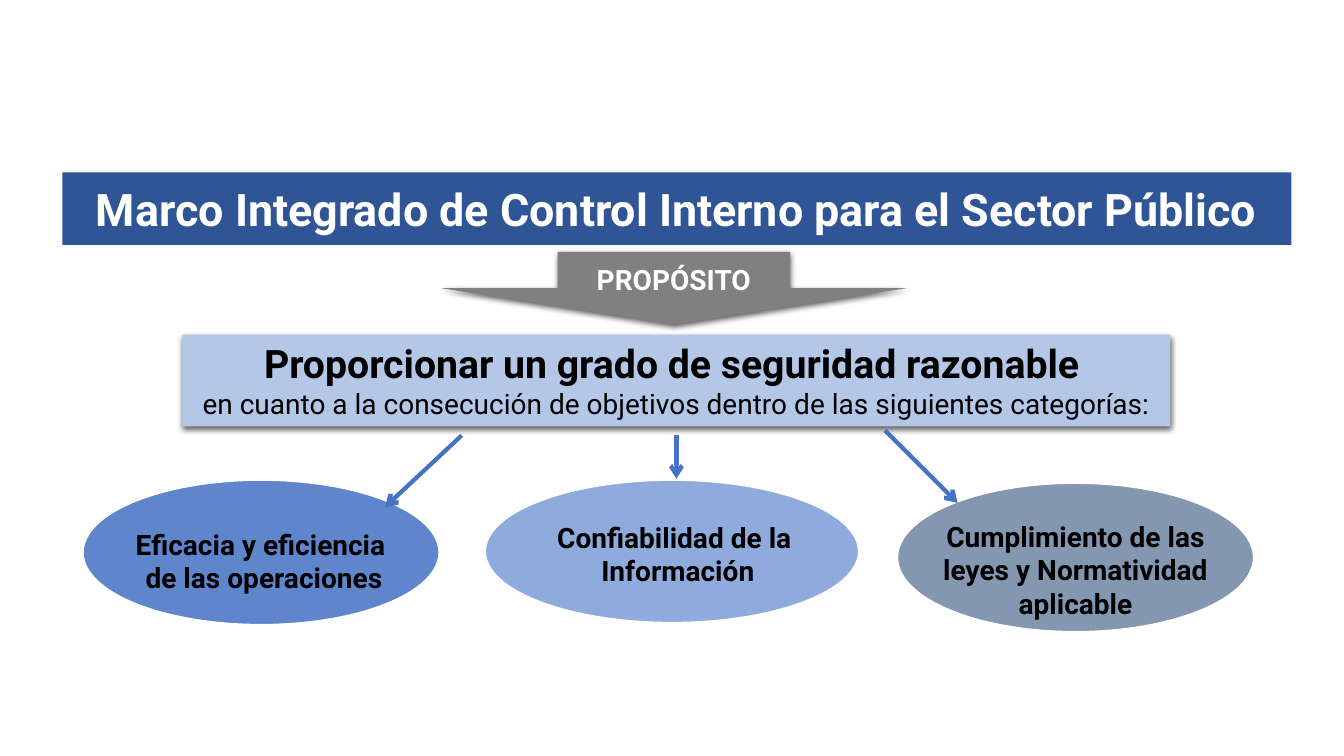
"""Builds the slide on the purpose of the internal control framework."""
from lxml import etree
from pptx import Presentation
from pptx.dml.color import RGBColor
from pptx.enum.shapes import MSO_CONNECTOR, MSO_SHAPE as SHAPE
from pptx.enum.text import MSO_ANCHOR as ANCHOR, MSO_AUTO_SIZE, PP_ALIGN
from pptx.oxml.ns import qn
from pptx.util import Inches, Pt

FONT = "Roboto"
COLORS = {
    "title": "2F5597", "purpose": "808080", "goal": "B4C7E7", "arrow": "4472C4",
    "efficacy": "5F86CD", "reliability": "8FAADC", "compliance": "8497B0",
    "white": "FFFFFF", "black": "000000",
}

TITLE = ("Marco Integrado de Control Interno para el Sector Público", (4.65, 22.8, 91.43, 9.6))
PURPOSE = ("PROPÓSITO", (32.85, 33.33, 34.58, 9.6))
GOAL = [
    ("Proporcionar un grado de seguridad razonable ", 28, True),
    ("en cuanto a la consecución de objetivos dentro de las siguientes categorías:", 20, False),
]
GOAL_BOX = (13.58, 44.27, 73.5, 12.13)
CATEGORIES = [
    {"color": "efficacy", "lines": ["Eficacia y eficiencia ", "de las operaciones"],
     "oval": (6.15, 63.47, 26.55, 19.2), "label": (8.25, 69.07, 22.8, 10.27),
     "arrow": (34.35, 57.6, 28.65, 67.07)},
    {"color": "reliability", "lines": ["Confiabilidad de la", " Información"],
     "oval": (36.08, 63.47, 27.83, 18.93), "label": (36.83, 68.13, 26.7, 10.27),
     "arrow": (50.33, 57.6, 50.33, 63.33)},
    {"color": "compliance", "lines": ["Cumplimiento de las leyes y Normatividad aplicable"],
     "oval": (66.75, 63.87, 26.55, 19.73), "label": (68.85, 68, 22.35, 14.8),
     "arrow": (65.85, 56.93, 71.25, 66.53)},
]

prs = Presentation()
prs.slide_width, prs.slide_height = Inches(13.33), Inches(7.5)
slide = prs.slides.add_slide(prs.slide_layouts[5])


def place(shares):
    """Turns percentages of the slide's width and height into lengths."""
    sizes = (prs.slide_width, prs.slide_height) * 2
    return [round(size * share / 100) for size, share in zip(sizes, shares)]


def rgb(name):
    return RGBColor.from_string(COLORS[name])


def paint(sp, color):
    sp.fill.solid()
    sp.fill.fore_color.rgb = rgb(color)


def write(sp, lines, color="black", anchor=ANCHOR.TOP):
    tf = sp.text_frame
    tf.word_wrap, tf.auto_size, tf.vertical_anchor = True, MSO_AUTO_SIZE.NONE, anchor
    for i, (text, size, bold) in enumerate(lines):
        p = tf.paragraphs[0] if i == 0 else tf.add_paragraph()
        p.alignment = PP_ALIGN.CENTER
        r = p.add_run()
        r.text = text
        r.font.name, r.font.size, r.font.bold = FONT, Pt(size), bold
        r.font.color.rgb = rgb(color)


def add_shape(kind, box, color, outline=None, shadow=False):
    sp = slide.shapes.add_shape(kind, *place(box))
    paint(sp, color)
    if outline:
        sp.line.color.rgb, sp.line.width = rgb(outline), Pt(1.5)
    else:
        sp.line.fill.background()
    sp.shadow.inherit = False
    if shadow:
        effects = sp._element.spPr.find(qn("a:effectLst"))
        outer = etree.SubElement(effects, qn("a:outerShdw"), blurRad=str(Pt(4.5)),
                                 dist=str(Pt(1.5)), dir="5400000", rotWithShape="0")
        tint = etree.SubElement(outer, qn("a:srgbClr"), val=COLORS["black"])
        etree.SubElement(tint, qn("a:alpha"), val="63000")
    return sp


def add_arrow(ends):
    line = slide.shapes.add_connector(MSO_CONNECTOR.STRAIGHT, *place(ends))
    line.line.color.rgb, line.line.width = rgb("arrow"), Pt(3)
    etree.SubElement(line.line._get_or_add_ln(), qn("a:tailEnd"), type="arrow")
    etree.SubElement(line._element.spPr, qn("a:effectLst"))


text, box = TITLE
title = slide.shapes.title
title.left, title.top, title.width, title.height = place(box)
paint(title, "title")
write(title, [(text, 32, True)], "white", ANCHOR.MIDDLE)

write(add_shape(SHAPE.RECTANGLE, GOAL_BOX, "goal", shadow=True), GOAL)

text, box = PURPOSE
purpose = add_shape(SHAPE.DOWN_ARROW, box, "purpose", shadow=True)
write(purpose, [(text, 20, True)], "white", ANCHOR.MIDDLE)

for category in CATEGORIES:
    add_shape(SHAPE.OVAL, category["oval"], category["color"], outline="white")
    label = slide.shapes.add_textbox(*place(category["label"]))
    write(label, [(line, 20, True) for line in category["lines"]])
    add_arrow(category["arrow"])

prs.save("out.pptx")
